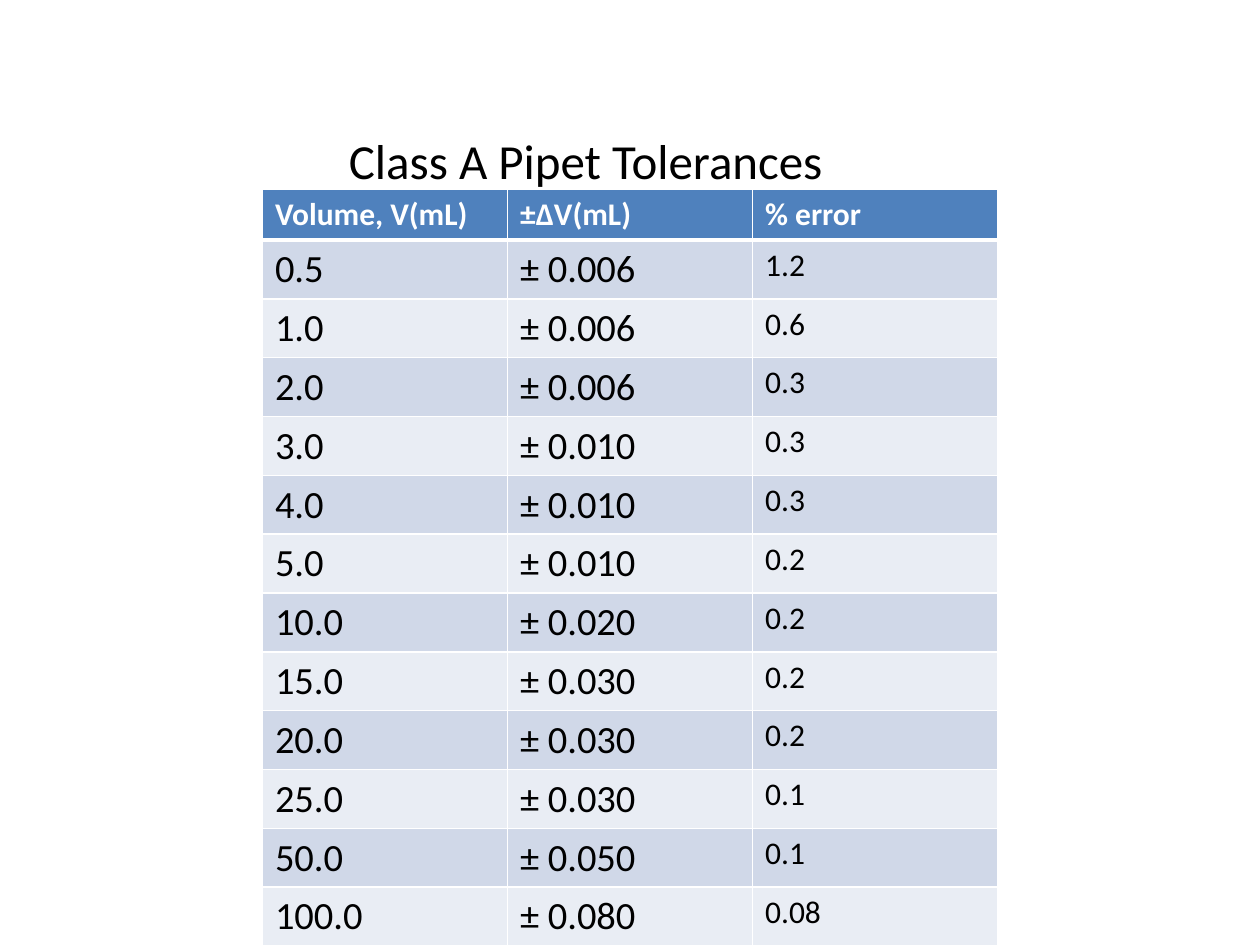
from dataclasses import dataclass

from lxml import etree
from pptx import Presentation
from pptx import util as u
from pptx.dml.color import RGBColor
from pptx.enum import text
from pptx.oxml import ns


@dataclass(frozen=True)
class Theme:
    font: str = "Calibri"
    black: str = "000000"
    white: str = "FFFFFF"
    header: str = "4F81BD"
    bands: tuple = ("D0D8E8", "E9EDF4")
    title_size: int = 28
    reading_size: int = 22
    small_size: int = 18
    border: int = 1
    header_rule: int = 3


theme = Theme()

headings = ("Volume, V(mL)", "±ΔV(mL)", "% error")
tolerances = [
    ("0.5", "0.006", "1.2"),
    ("1.0", "0.006", "0.6"),
    ("2.0", "0.006", "0.3"),
    ("3.0", "0.010", "0.3"),
    ("4.0", "0.010", "0.3"),
    ("5.0", "0.010", "0.2"),
    ("10.0", "0.020", "0.2"),
    ("15.0", "0.030", "0.2"),
    ("20.0", "0.030", "0.2"),
    ("25.0", "0.030", "0.1"),
    ("50.0", "0.050", "0.1"),
    ("100.0", "0.080", "0.08"),
]
rows = [headings] + [(volume, f"± {delta}", error) for volume, delta, error in tolerances]


def add_run(paragraph, wording, size, color, bold=False):
    run = paragraph.add_run()
    run.text = wording
    run.font.name = theme.font
    run.font.size = u.Pt(size)
    run.font.bold = bold
    run.font.color.rgb = RGBColor.from_string(color)


def set_borders(cell, widths):
    """Draw white cell borders; widths maps a:lnL, a:lnR, a:lnT, a:lnB to points."""
    properties = cell._tc.get_or_add_tcPr()
    for position, (tag, width) in enumerate(widths.items()):
        line = etree.Element(ns.qn(tag), w=str(u.Pt(width)))
        fill = etree.SubElement(line, ns.qn("a:solidFill"))
        etree.SubElement(fill, ns.qn("a:srgbClr"), val=theme.white)
        properties.insert(position, line)


presentation = Presentation()
presentation.slide_width = u.Cm(25.4)
presentation.slide_height = u.Cm(19.05)
slide = presentation.slides.add_slide(presentation.slide_layouts[5])

# Title
title = slide.shapes.title
title.left, title.top = u.Cm(6.78), u.Cm(2.51)
title.width, title.height = u.Cm(10.6), u.Cm(1.45)
frame = title.text_frame
frame.word_wrap = True
frame.auto_size = text.MSO_AUTO_SIZE.SHAPE_TO_FIT_TEXT
frame.vertical_anchor = text.MSO_ANCHOR.TOP
paragraph = frame.paragraphs[0]
paragraph.alignment = text.PP_ALIGN.LEFT
add_run(paragraph, "Class A Pipet Tolerances", theme.title_size, theme.black)

# Tolerance table
table_height = u.Cm(15.24)
table_shape = slide.shapes.add_table(
    len(rows), len(headings), u.Cm(5.29), u.Cm(3.82), u.Cm(14.82), table_height
)
table = table_shape.table
for row in table.rows:
    row.height = u.Cm(0.84)
table_shape.height = table_height

for row_index, values in enumerate(rows):
    is_header = row_index == 0
    for column_index, value in enumerate(values):
        cell = table.cell(row_index, column_index)
        is_small = is_header or column_index == 2
        cell.fill.solid()
        cell.fill.fore_color.rgb = RGBColor.from_string(
            theme.header if is_header else theme.bands[(row_index - 1) % 2]
        )
        set_borders(cell, {
            "a:lnL": theme.border,
            "a:lnR": theme.border,
            "a:lnT": theme.header_rule if row_index == 1 else theme.border,
            "a:lnB": theme.header_rule if is_header else theme.border,
        })
        add_run(
            cell.text_frame.paragraphs[0],
            value,
            theme.small_size if is_small else theme.reading_size,
            theme.white if is_header else theme.black,
            bold=is_header,
        )

presentation.save("out.pptx")
